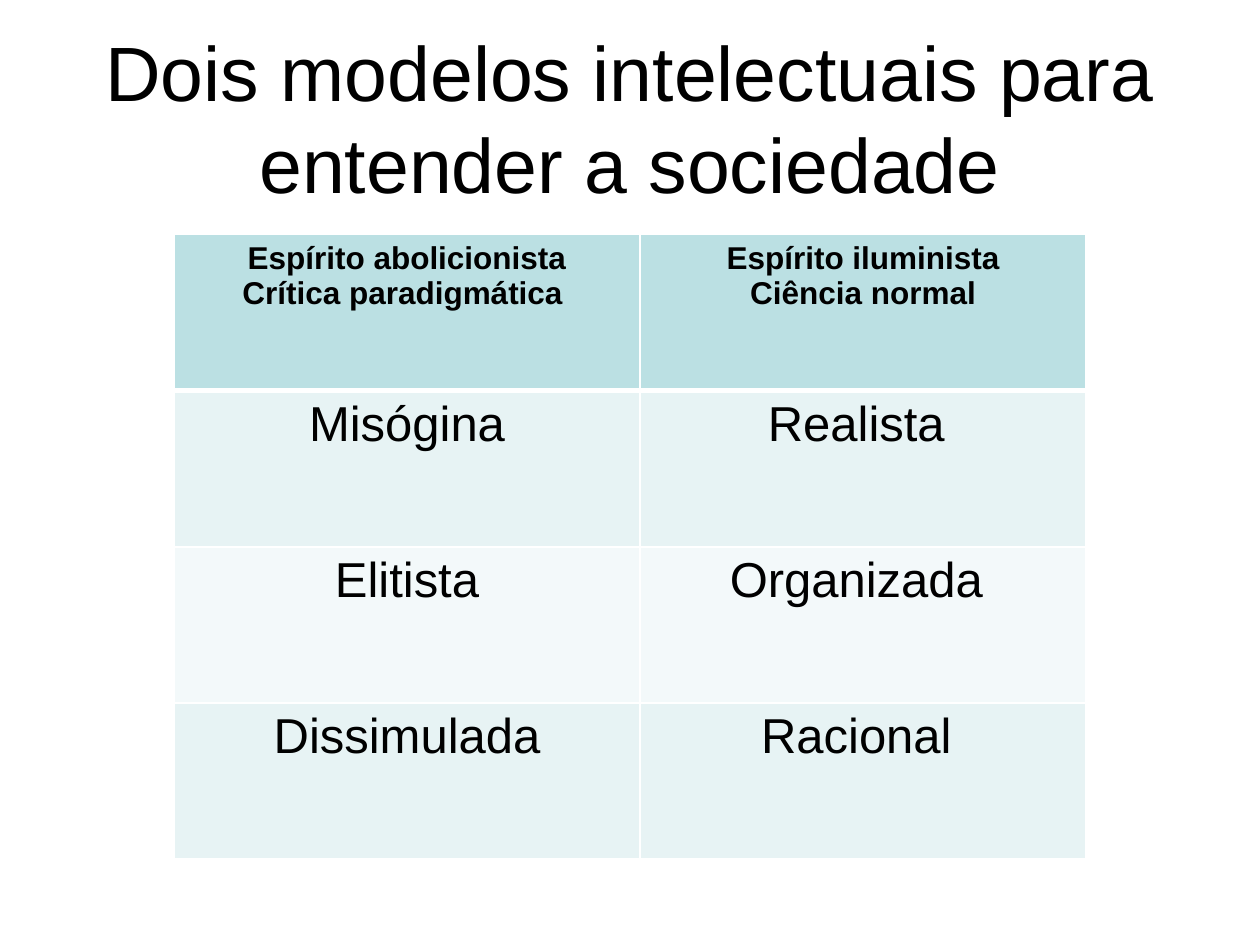
from dataclasses import dataclass

from lxml.etree import SubElement
from pptx import Presentation
from pptx.dml.color import RGBColor
from pptx.enum.text import MSO_ANCHOR, PP_ALIGN
from pptx.oxml.ns import qn
from pptx.util import Inches, Pt


@dataclass(frozen=True)
class Theme:
    font: str = "Arial"
    text: str = "000000"
    border: str = "FFFFFF"
    header_fill: str = "BBE0E3"
    band_fills: tuple = ("E7F3F4", "F3F9FA")
    title_size: int = 44
    header_size: int = 18
    body_size: int = 28
    border_width: int = 1
    header_rule_width: int = 3


THEME = Theme()
TITLE = "Dois modelos intelectuais para entender a sociedade"
COLUMN_WIDTHS = (3.7, 3.54)
ROW_HEIGHT = 1.24
# A trailing space shifts the centred text slightly to the left.
ROWS = (
    ("Espírito abolicionista\nCrítica paradigmática ", "Espírito iluminista\nCiência normal"),
    ("Misógina", "Realista "),
    ("Elitista", "Organizada "),
    ("Dissimulada", "Racional "),
)


def write_centred(text_frame, text, size, bold=False):
    text_frame.text = text
    for paragraph in text_frame.paragraphs:
        paragraph.alignment = PP_ALIGN.CENTER
        paragraph.font.name = THEME.font
        paragraph.font.size = Pt(size)
        paragraph.font.bold = bold
        paragraph.font.color.rgb = RGBColor.from_string(THEME.text)


def add_title(slide):
    title = slide.shapes.add_textbox(Inches(0.5), Inches(0.3), Inches(9), Inches(1.25))
    title.text_frame.word_wrap = True
    title.text_frame.vertical_anchor = MSO_ANCHOR.MIDDLE
    write_centred(title.text_frame, TITLE, THEME.title_size)


def set_borders(cell, top, bottom):
    """Draw the four cell borders; must run before the cell is filled."""
    properties = cell._tc.get_or_add_tcPr()
    side = THEME.border_width
    for tag, width in (("a:lnL", side), ("a:lnR", side), ("a:lnT", top), ("a:lnB", bottom)):
        line = SubElement(properties, qn(tag), w=str(Pt(width)))
        fill = SubElement(line, qn("a:solidFill"))
        SubElement(fill, qn("a:srgbClr"), val=THEME.border)


def style_cell(cell, text, row):
    is_header = row == 0
    rule, thin = THEME.header_rule_width, THEME.border_width
    set_borders(cell, top=rule if row == 1 else thin, bottom=rule if is_header else thin)
    color = THEME.header_fill if is_header else THEME.band_fills[(row - 1) % 2]
    cell.fill.solid()
    cell.fill.fore_color.rgb = RGBColor.from_string(color)
    size = THEME.header_size if is_header else THEME.body_size
    write_centred(cell.text_frame, text, size, bold=is_header)


def add_comparison_table(slide):
    frame = slide.shapes.add_table(
        len(ROWS), len(COLUMN_WIDTHS), Inches(1.38), Inches(1.86),
        Inches(sum(COLUMN_WIDTHS)), Inches(ROW_HEIGHT * len(ROWS)),
    )
    table = frame.table
    for column, width in zip(table.columns, COLUMN_WIDTHS):
        column.width = Inches(width)
    for row, texts in enumerate(ROWS):
        table.rows[row].height = Inches(ROW_HEIGHT)
        for column, text in enumerate(texts):
            style_cell(table.cell(row, column), text, row)


def main():
    presentation = Presentation()
    presentation.slide_width = Inches(10)
    presentation.slide_height = Inches(7.5)
    slide = presentation.slides.add_slide(presentation.slide_layouts[6])
    add_title(slide)
    add_comparison_table(slide)
    presentation.save("out.pptx")


if __name__ == "__main__":
    main()
